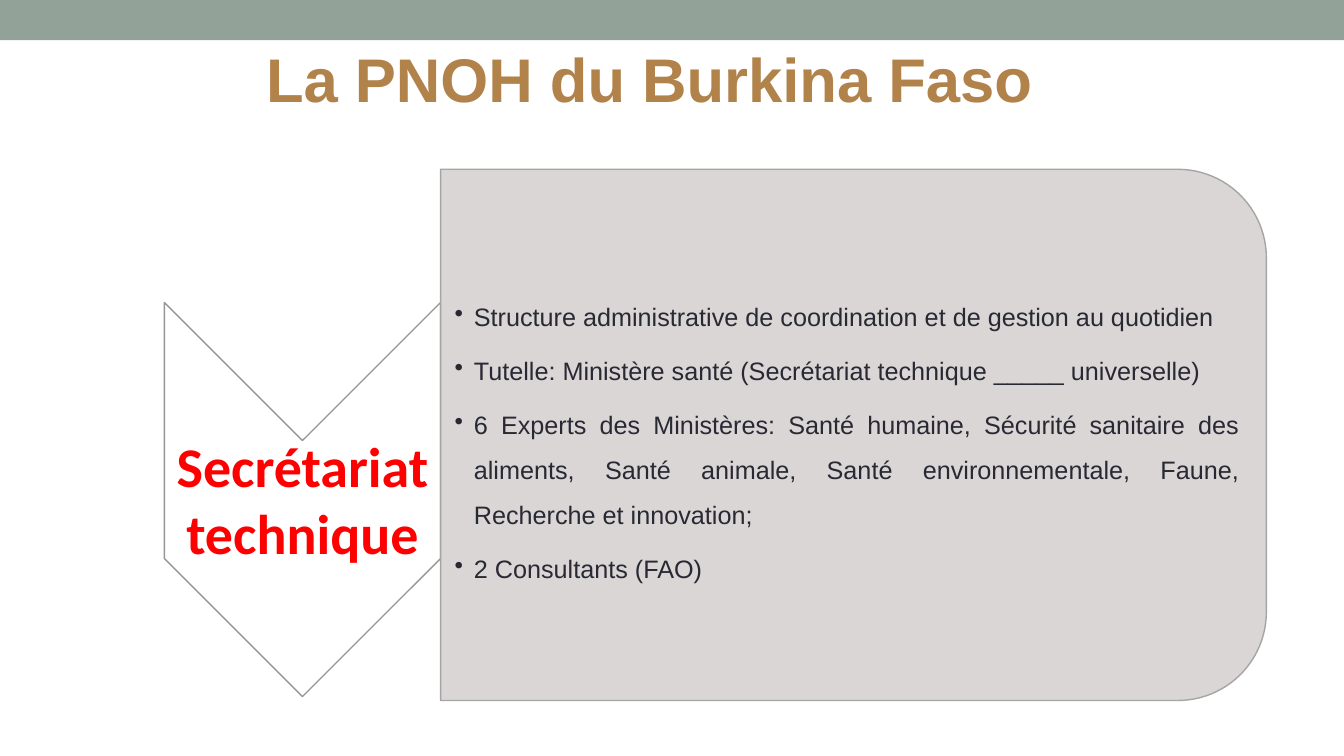
from lxml import etree
from pptx import Presentation
from pptx.dml.color import RGBColor
from pptx.enum.shapes import MSO_SHAPE
from pptx.enum.text import MSO_ANCHOR, PP_ALIGN
from pptx.oxml.ns import qn
from pptx.util import Inches, Pt

RECTANGLE, CHEVRON = MSO_SHAPE.RECTANGLE, MSO_SHAPE.CHEVRON
ROUNDED_TOP = MSO_SHAPE.ROUND_2_SAME_RECTANGLE
TOP, MIDDLE = MSO_ANCHOR.TOP, MSO_ANCHOR.MIDDLE
CENTER, JUSTIFY = PP_ALIGN.CENTER, PP_ALIGN.JUSTIFY

TITLE = ["La PNOH du Burkina Faso"]
LABEL = ["Secrétariat technique"]
ROLES = [
    "Structure administrative de coordination et de gestion au quotidien",
    "Tutelle: Ministère santé (Secrétariat technique _____ universelle)",
    "6 Experts des Ministères: Santé humaine, Sécurité sanitaire des aliments, "
    "Santé animale, Santé environnementale, Faune, Recherche et innovation;",
    "2 Consultants (FAO)",
]

# Left, top, width, height as seen on the page
BAND_AREA = (0, 0, 13.33, 0.4)
CHEVRON_AREA = (1.63, 3.0, 2.74, 3.91)
PANEL_AREA = (4.37, 1.68, 8.19, 5.27)
TITLE_AREA = (2.5, 0.36, 7.89, 0.84)
LABEL_AREA = (1.63, 4.36, 2.74, 1.17)
ROLES_AREA = (4.37, 1.94, 7.93, 4.75)

TITLE_FONT = dict(name="Arial", size=Pt(44), bold=True)
LABEL_FONT = dict(name="Calibri", size=Pt(40), bold=True)
ROLES_FONT = dict(name="Arial", size=Pt(18), bold=False)
BULLET_INDENT = Inches(0.19)


def color(value):
    return RGBColor.from_string(value)


def add_block(page, kind, area, fill, line=None, turned=False, opacity=100):
    """Draw a filled shape; a turned one is rotated a quarter to cover its area."""
    left, top, width, height = area
    if turned:
        left, top = left + (width - height) / 2, top + (height - width) / 2
        width, height = height, width
    block = page.shapes.add_shape(kind, *map(Inches, (left, top, width, height)))
    block.shadow.inherit = False
    block.rotation = 90 if turned else 0
    block.fill.solid()
    block.fill.fore_color.rgb = color(fill)
    if opacity < 100:
        tint = block.fill._xPr.find(f".//{qn('a:srgbClr')}")
        etree.SubElement(tint, qn("a:alpha"), val=str(opacity * 1000))
    if line:
        block.line.color.rgb = color(line)
        block.line.width = Pt(1)
    else:
        block.line.fill.background()


def add_text(page, area, lines, font, ink, anchor, margins, layout, wrap=True):
    box = page.shapes.add_textbox(*map(Inches, area))
    frame = box.text_frame
    frame.word_wrap = wrap
    frame.vertical_anchor = anchor
    for side, margin in zip(("left", "top", "right", "bottom"), margins):
        setattr(frame, f"margin_{side}", Inches(margin))
    for index, line in enumerate(lines):
        para = frame.add_paragraph() if index else frame.paragraphs[0]
        for name, value in layout.items():
            setattr(para, name, value)
        span = para.add_run()
        span.text = line
        for name, value in font.items():
            setattr(span.font, name, value)
        span.font.color.rgb = color(ink)
    return frame


def add_bullets(frame):
    for para in frame.paragraphs:
        properties = para._p.get_or_add_pPr()
        properties.set("marL", str(BULLET_INDENT))
        properties.set("indent", str(-BULLET_INDENT))
        etree.SubElement(properties, qn("a:buChar"), char="•")


def main():
    deck = Presentation()
    deck.slide_width, deck.slide_height = Inches(13.33), Inches(7.5)
    page = deck.slides.add_slide(deck.slide_layouts[6])

    add_block(page, RECTANGLE, BAND_AREA, "93A299")
    add_block(page, CHEVRON, CHEVRON_AREA, "FFFFFF", "969696", turned=True)
    add_text(page, LABEL_AREA, LABEL, LABEL_FONT, "FF0000", MIDDLE, [0.03] * 4,
             dict(alignment=CENTER, space_after=Pt(6)))
    add_block(page, ROUNDED_TOP, PANEL_AREA, "D5D2D1", "A5A5A5", turned=True, opacity=90)
    roles = add_text(page, ROLES_AREA, ROLES, ROLES_FONT, "292934", MIDDLE,
                     (0.14, 0.01, 0.01, 0.01),
                     dict(alignment=JUSTIFY, level=1, line_spacing=1.5, space_after=Pt(6)))
    add_bullets(roles)
    add_text(page, TITLE_AREA, TITLE, TITLE_FONT, "B1824A", TOP, (0.1, 0.05, 0.1, 0.05),
             dict(alignment=CENTER, space_after=Pt(18)), wrap=False)
    deck.save("out.pptx")


if __name__ == "__main__":
    main()
